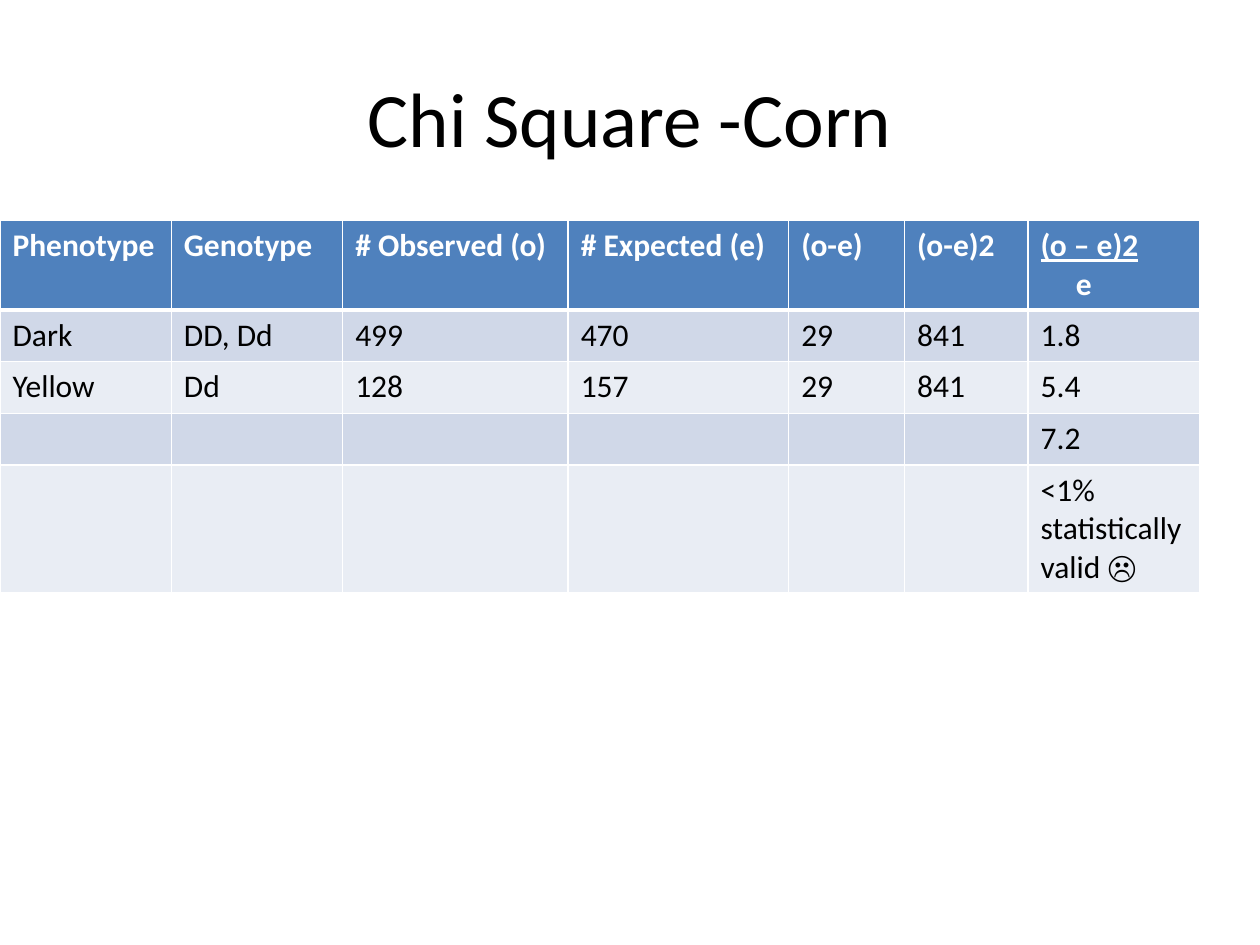
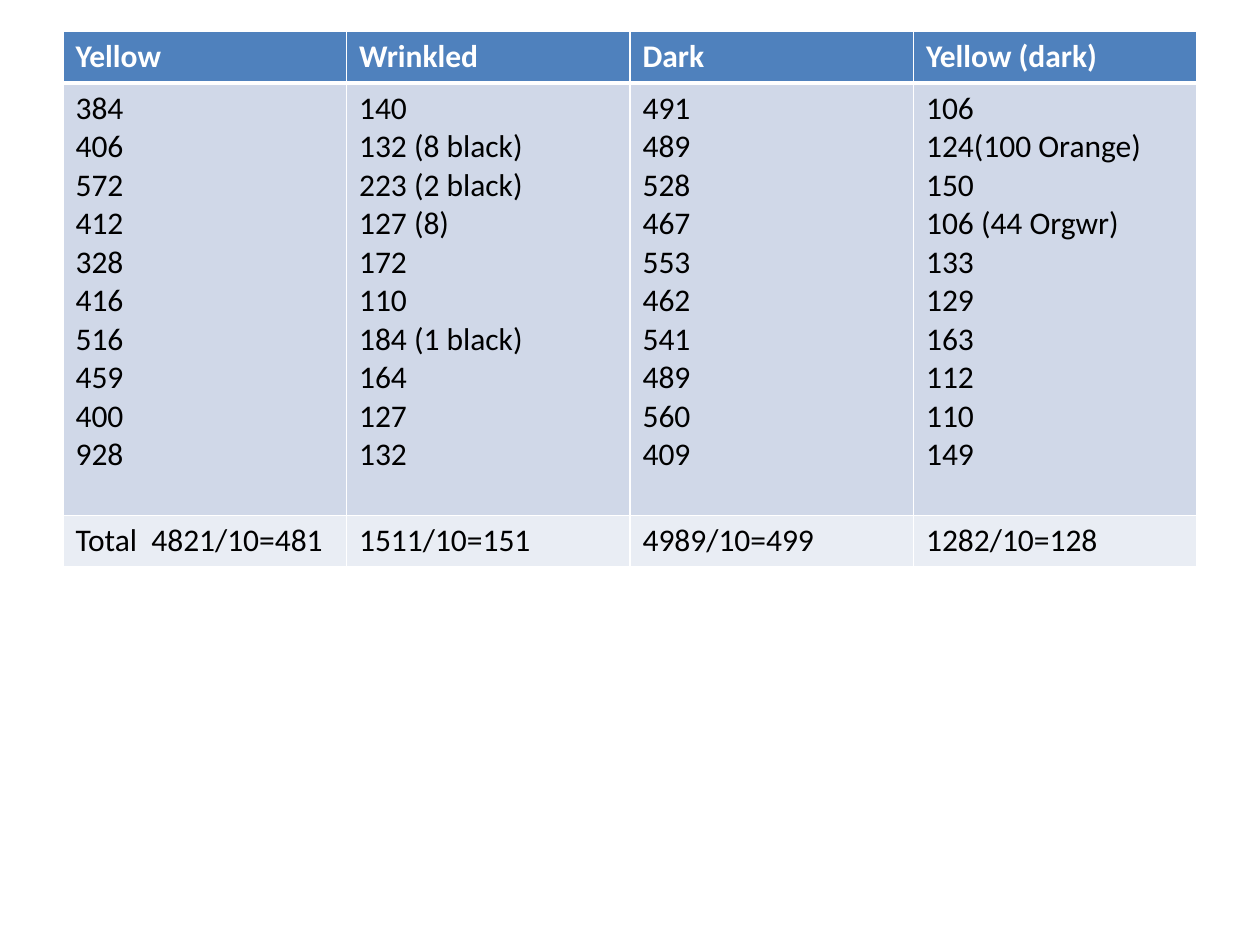
from dataclasses import dataclass

from lxml.etree import SubElement
from pptx import Presentation
from pptx.dml.color import RGBColor as RGB
from pptx.enum.text import MSO_ANCHOR as ANCHOR, PP_ALIGN as ALIGN
from pptx.oxml.ns import qn
from pptx.util import Inches, Pt


@dataclass(frozen=True)
class Theme:
    font: str = "Calibri"
    title_size: int = 44
    table_size: int = 18
    ink: str = "000000"
    paper: str = "FFFFFF"
    header: str = "4F81BD"
    bands: tuple = ("D0D8E8", "E9EDF4")
    rule: int = 1
    header_rule: int = 3
    row_height: float = 0.41


THEME = Theme()
TITLE_ONLY, BLANK = 5, 6

CORN_COLS = [1.36, 1.36, 1.79, 1.75, 0.92, 0.98, 1.36]
CORN_ROWS = [0.7] + [THEME.row_height] * 3 + [1.01]
CORN = [
    ["Phenotype", "Genotype", "# Observed (o)", "# Expected (e)",
     "(o-e)", "(o-e)2", "(o – e)2\ne"],
    ["Dark", "DD, Dd", "499", "470", "29", "841", "1.8"],
    ["Yellow", "Dd", "128", "157", "29", "841", "5.4"],
    [""] * 6 + ["7.2"],
    [""] * 6 + ["<1% statistically valid ☹"],
]

KERNEL_ROWS = [THEME.row_height, 3.43, THEME.row_height]
KERNEL_COUNTS = {
    "Yellow": ["384", "406", "572", "412", "328",
               "416", "516", "459", "400", "928"],
    "Wrinkled": ["140", "132 (8 black)", "223 (2 black)", "127 (8)", "172",
                 "110", "184 (1 black)", "164", "127", "132"],
    "Dark": ["491", "489", "528", "467", "553",
             "462", "541", "489", "560", "409"],
    "Yellow (dark)": ["106", "124(100 Orange)", "150", "106 (44 Orgwr)", "133",
                      "129", "163", "112", "110", "149"],
}
KERNEL_TOTALS = ["Total  4821/10=481", "1511/10=151",
                 "4989/10=499", "1282/10=128"]


def set_font(p, size, color, **extra):
    values = {"name": THEME.font, "size": Pt(size), **extra}
    for font in [p.font] + [r.font for r in p.runs]:
        for key, value in values.items():
            setattr(font, key, value)
        font.color.rgb = RGB.from_string(color)


def set_borders(cell, widths):
    tc_pr = cell._tc.get_or_add_tcPr()
    for side, width in widths.items():
        line = SubElement(tc_pr, qn(f"a:ln{side}"), w=str(Pt(width)))
        fill = SubElement(line, qn("a:solidFill"))
        SubElement(fill, qn("a:srgbClr"), val=THEME.paper)


def style_cell(cell, text, row):
    is_header = row == 0
    cell.text = text
    set_borders(cell, {
        "L": THEME.rule,
        "R": THEME.rule,
        "T": THEME.header_rule if row == 1 else THEME.rule,
        "B": THEME.header_rule if is_header else THEME.rule,
    })
    cell.fill.solid()
    fill = THEME.header if is_header else THEME.bands[(row - 1) % 2]
    cell.fill.fore_color.rgb = RGB.from_string(fill)
    for p in cell.text_frame.paragraphs:
        set_font(p, THEME.table_size, THEME.paper if is_header else THEME.ink,
                 bold=is_header)


def add_data_table(s, left, top, cols, heights, rows):
    table = s.shapes.add_table(
        len(rows), len(cols), Inches(left), Inches(top),
        Inches(sum(cols)), Inches(sum(heights))).table
    for column, width in zip(table.columns, cols):
        column.width = Inches(width)
    for i, (height, texts) in enumerate(zip(heights, rows)):
        table.rows[i].height = Inches(height)
        for j, text in enumerate(texts):
            style_cell(table.cell(i, j), text, i)
    return table


def add_title(s, text, left, top, width, height):
    sp = s.shapes.title
    box = {"left": left, "top": top, "width": width, "height": height}
    for key, value in box.items():
        setattr(sp, key, Inches(value))
    tf = sp.text_frame
    tf.text = text
    tf.vertical_anchor = ANCHOR.MIDDLE
    p = tf.paragraphs[0]
    p.alignment = ALIGN.CENTER
    set_font(p, THEME.title_size, THEME.ink)


def format_fraction(cell):
    numerator, denominator = cell.text_frame.paragraphs
    for r in numerator.runs:
        r.font.underline = True
    denominator._p.get_or_add_pPr().set("marL", str(Inches(0.28)))


def build_chi_square(prs):
    s = prs.slides.add_slide(prs.slide_layouts[TITLE_ONLY])
    add_title(s, "Chi Square -Corn", 0.5, 0.3, 9, 1.25)
    table = add_data_table(s, 0, 1.75, CORN_COLS, CORN_ROWS, CORN)
    format_fraction(table.cell(0, len(CORN_COLS) - 1))


def build_kernel_counts(prs):
    s = prs.slides.add_slide(prs.slide_layouts[BLANK])
    count = len(KERNEL_COUNTS)
    rows = [list(KERNEL_COUNTS),
            ["\n".join(counts) for counts in KERNEL_COUNTS.values()],
            KERNEL_TOTALS]
    add_data_table(s, 0.5, 0.25, [9 / count] * count, KERNEL_ROWS, rows)


def main():
    prs = Presentation()
    prs.slide_width, prs.slide_height = Inches(10), Inches(7.5)
    build_chi_square(prs)
    build_kernel_counts(prs)
    prs.save("out.pptx")


if __name__ == "__main__":
    main()
